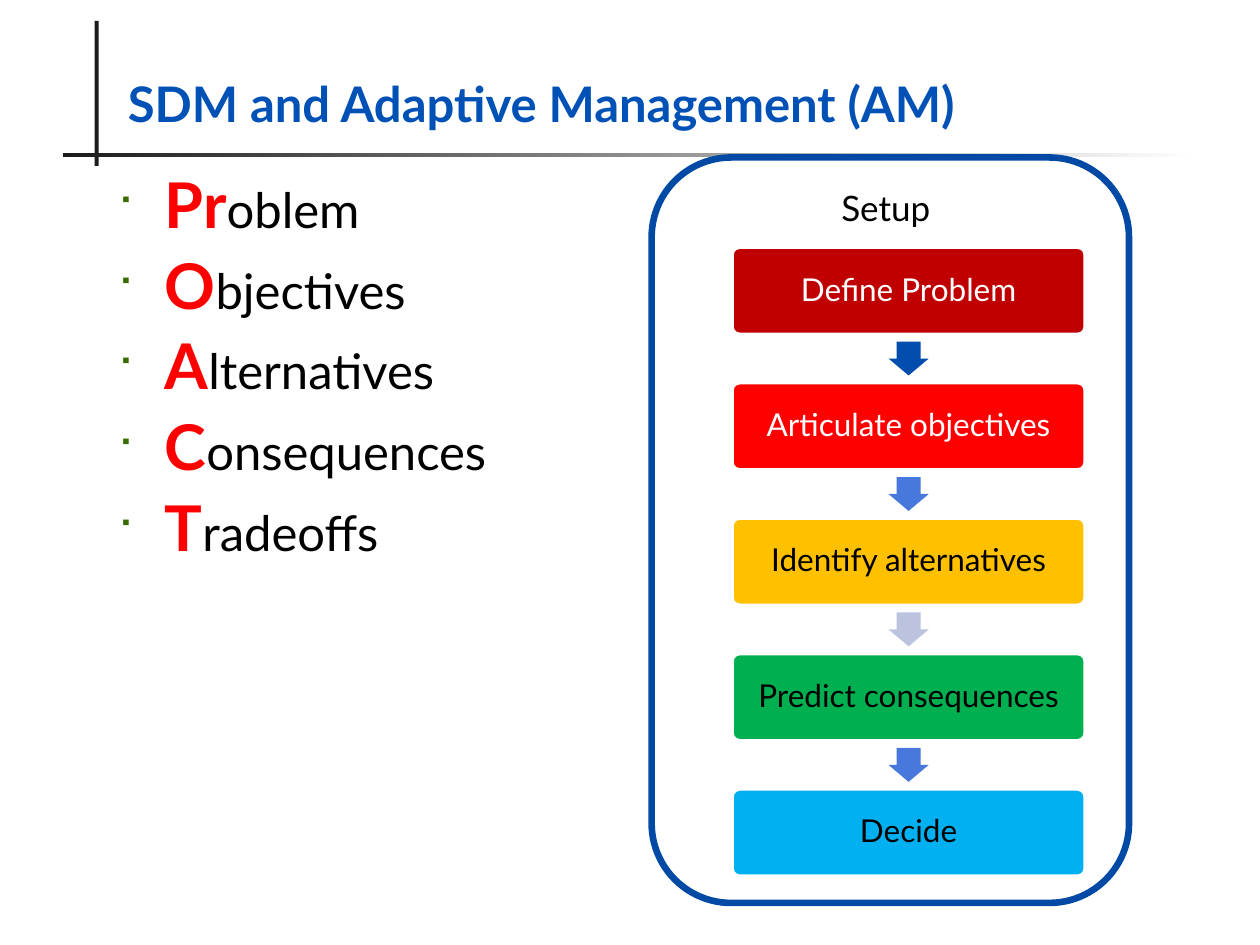
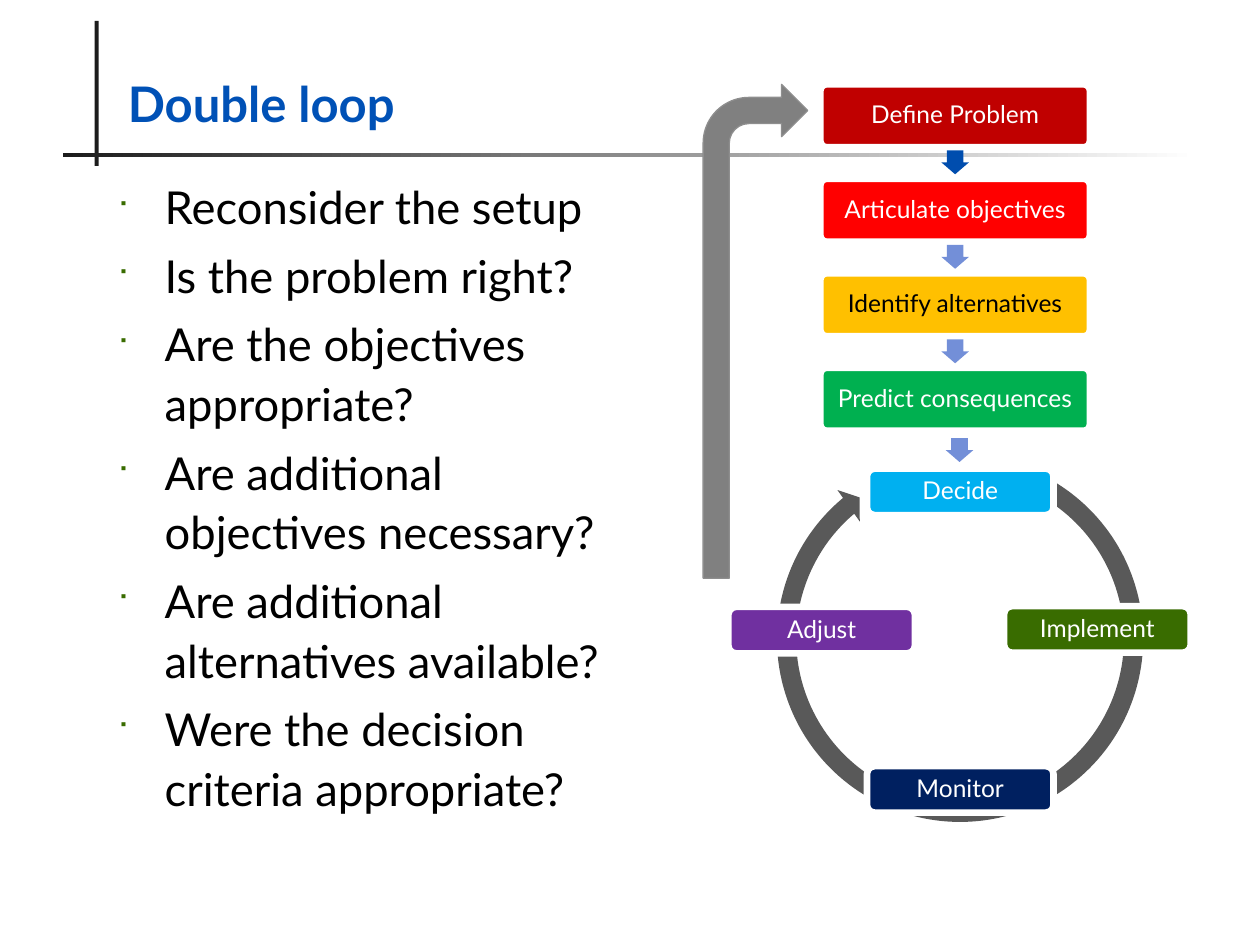
"""Build two slides on structured decision making and adaptive management."""
from dataclasses import dataclass

from lxml import etree
from pptx import Presentation
from pptx.dml.color import RGBColor
from pptx.enum import shapes, text
from pptx.oxml import ns
from pptx.util import Pt


@dataclass(frozen=True)
class Theme:
    font: str = "Lato"
    title: str = "0051B6"
    ink: str = "1C1C1C"
    black: str = "000000"
    white: str = "FFFFFF"
    bullet: str = "396C00"
    frame: str = "0049A5"
    problem: str = "C00000"
    accent: str = "FF0000"
    alternatives: str = "FFC000"
    consequences: str = "00B050"
    decide: str = "00B0F0"
    monitor: str = "002060"
    adjust: str = "7030A0"
    ring: str = "595959"
    bent: str = "808080"
    bent_line: str = "8E8E8E"
    arrow_dark: str = "004DAE"
    arrow_mid: str = "4878DC"
    arrow_pale: str = "BCC3DF"
    arrow_soft: str = "738FD8"
    title_size: float = 28
    initial_size: float = 36
    word_size: float = 28
    question_size: float = 25.9
    setup_size: float = 20
    step_size: float = 18
    small_size: float = 14
    edge: float = 3.78


T = Theme()
KIND = shapes.MSO_SHAPE
ALIGN = text.PP_ALIGN
ANCHOR = text.MSO_ANCHOR


def add_shape(slide, kind, box, fill, line=None, width=T.edge, adj=()):
    sp = slide.shapes.add_shape(kind, *[Pt(v) for v in box])
    sp.shadow.inherit = False
    sp.fill.solid()
    sp.fill.fore_color.rgb = RGBColor.from_string(fill)
    if line:
        sp.line.color.rgb = RGBColor.from_string(line)
        sp.line.width = Pt(width)
    else:
        sp.line.fill.background()
    for i, value in enumerate(adj):
        sp.adjustments[i] = value
    return sp


def add_text(sp, paragraphs, size=18, color=T.black, bold=False, align=ALIGN.LEFT,
             anchor=ANCHOR.TOP, inset=None, spacing=1.0, before=0, bullet=False):
    """Write paragraphs, each a list of (text, format overrides) runs."""
    tf = sp.text_frame
    tf.word_wrap = True
    tf.vertical_anchor = anchor
    if inset is not None:
        tf.margin_left = tf.margin_right = tf.margin_top = tf.margin_bottom = Pt(inset)
    for i, runs in enumerate(paragraphs):
        p = tf.add_paragraph() if i else tf.paragraphs[0]
        p.alignment = align
        p.line_spacing = spacing
        p.space_before = Pt(before if i else 0)
        if bullet:
            pPr = p._p.get_or_add_pPr()
            pPr.set("marL", str(Pt(27)))
            pPr.set("indent", str(Pt(-27)))
            clr = etree.SubElement(pPr, ns.qn("a:buClr"))
            etree.SubElement(clr, ns.qn("a:srgbClr"), val=T.bullet)
            etree.SubElement(pPr, ns.qn("a:buSzPct"), val="60000")
            etree.SubElement(pPr, ns.qn("a:buFont"), typeface="Wingdings")
            etree.SubElement(pPr, ns.qn("a:buChar"), char="■")
        for words, style in runs:
            r = p.add_run()
            r.text = words
            r.font.name = T.font
            r.font.size = Pt(style.get("size", size))
            r.font.bold = style.get("bold", bold)
            r.font.color.rgb = RGBColor.from_string(style.get("color", color))


prs = Presentation()
prs.slide_width, prs.slide_height = Pt(720), Pt(540)

initial = dict(size=T.initial_size, color=T.accent, bold=True)
proact = [[(head, initial), (tail, {})] for head, tail in (
    ("Pr", "oblem"), ("O", "bjectives"), ("A", "lternatives"),
    ("C", "onsequences"), ("T", "radeoffs"))]
questions = [[(q, {})] for q in (
    "Reconsider the setup",
    "Is the problem right?",
    "Are the objectives appropriate?",
    "Are additional objectives necessary?",
    "Are additional alternatives available?",
    "Were the decision criteria appropriate?")]

slides = []
for title, body, style in (
        ("SDM and Adaptive Management (AM)", proact,
         dict(size=T.word_size, spacing=0.9, before=7.2)),
        ("Double loop", questions,
         dict(size=T.question_size, spacing=1.1, before=4.9))):
    s = prs.slides.add_slide(prs.slide_layouts[6])
    slides.append(s)
    add_shape(s, KIND.RECTANGLE, (54, 12, 2.4, 82.8), T.ink)
    rule = add_shape(s, KIND.RECTANGLE, (36, 87.6, 648, 2.2), T.ink)
    rule.fill.gradient()
    rule.fill.gradient_angle = 0
    for stop, color in zip(rule.fill.gradient_stops, (T.ink, T.white)):
        stop.color.rgb = RGBColor.from_string(color)
    tb = s.shapes.add_textbox(Pt(66), Pt(18), Pt(618), Pt(61.2))
    add_text(tb, [[(title, {})]], size=T.title_size, color=T.title, bold=True,
             anchor=ANCHOR.BOTTOM)
    tb = s.shapes.add_textbox(Pt(60), Pt(96), Pt(303), Pt(386.4))
    add_text(tb, body, bullet=True, **style)

setup, loop = slides

frame = add_shape(setup, KIND.ROUNDED_RECTANGLE, (372.4, 90, 272.8, 426), T.white, T.frame)
add_text(frame, [[("Setup ", {})]], size=T.setup_size, align=ALIGN.CENTER)

add_shape(loop, KIND.CIRCULAR_ARROW, (438.5, 254.9, 220.3, 220.3), T.ring,
          adj=(0.05, 2.73, 138.02, 174.06, 0.05))
stations = (
    ("Decide", T.decide, 495.4, 267.8),
    ("Implement", T.bullet, 573.8, 346.4),
    ("Monitor", T.monitor, 495.4, 437.8),
    ("Adjust", T.adjust, 416.2, 346.8))
for label, fill, left, top in stations:
    sp = add_shape(loop, KIND.ROUNDED_RECTANGLE, (left, top, 106.6, 26.6), fill, T.white)
    add_text(sp, [[(label, {})]], size=T.small_size, color=T.white, align=ALIGN.CENTER,
             anchor=ANCHOR.MIDDLE, inset=4.3, spacing=0.9)

steps = (
    ("Define Problem", T.problem, T.white, T.white),
    ("Articulate objectives", T.accent, T.white, T.white),
    ("Identify alternatives", T.alternatives, T.black, T.black),
    ("Predict consequences", T.consequences, T.black, T.white),
    ("Decide", T.decide, T.black, T.white))
chains = (
    (setup, steps, 2, T.step_size, 7.2, (417.4, 140.4, 203.6, 51.6), 77.4, (23, 19.4), 195.2,
     (T.arrow_dark, T.arrow_mid, T.arrow_pale, T.arrow_mid)),
    (loop, steps[:4], 3, T.small_size, 4.3, (468.8, 48.2, 154, 36), 54, (15.8, 13.6), 86,
     (T.arrow_dark,) + (T.arrow_soft,) * 2))
for s, chain, ink, size, inset, box, pitch, (aw, ah), arrow_top, arrows in chains:
    left, top, width, height = box
    for i, step in enumerate(chain):
        sp = add_shape(s, KIND.ROUNDED_RECTANGLE, (left, top + i * pitch, width, height),
                       step[1], T.white, adj=(0.1,))
        add_text(sp, [[(step[0], {})]], size=size, color=step[ink], align=ALIGN.CENTER,
                 anchor=ANCHOR.MIDDLE, inset=inset, spacing=0.9)
    for i, color in enumerate(arrows):
        add_shape(s, KIND.DOWN_ARROW,
                  (left + (width - aw) / 2, arrow_top + i * pitch, aw, ah), color, adj=(0.6, 0.5))

add_shape(loop, KIND.DOWN_ARROW, (540.4, 250.4, 15.8, 13.6), T.arrow_soft, adj=(0.6, 0.5))
add_shape(loop, KIND.BENT_ARROW, (401.8, 48.2, 59.8, 282.2), T.bent, T.bent_line, 0.75)

prs.save("out.pptx")
